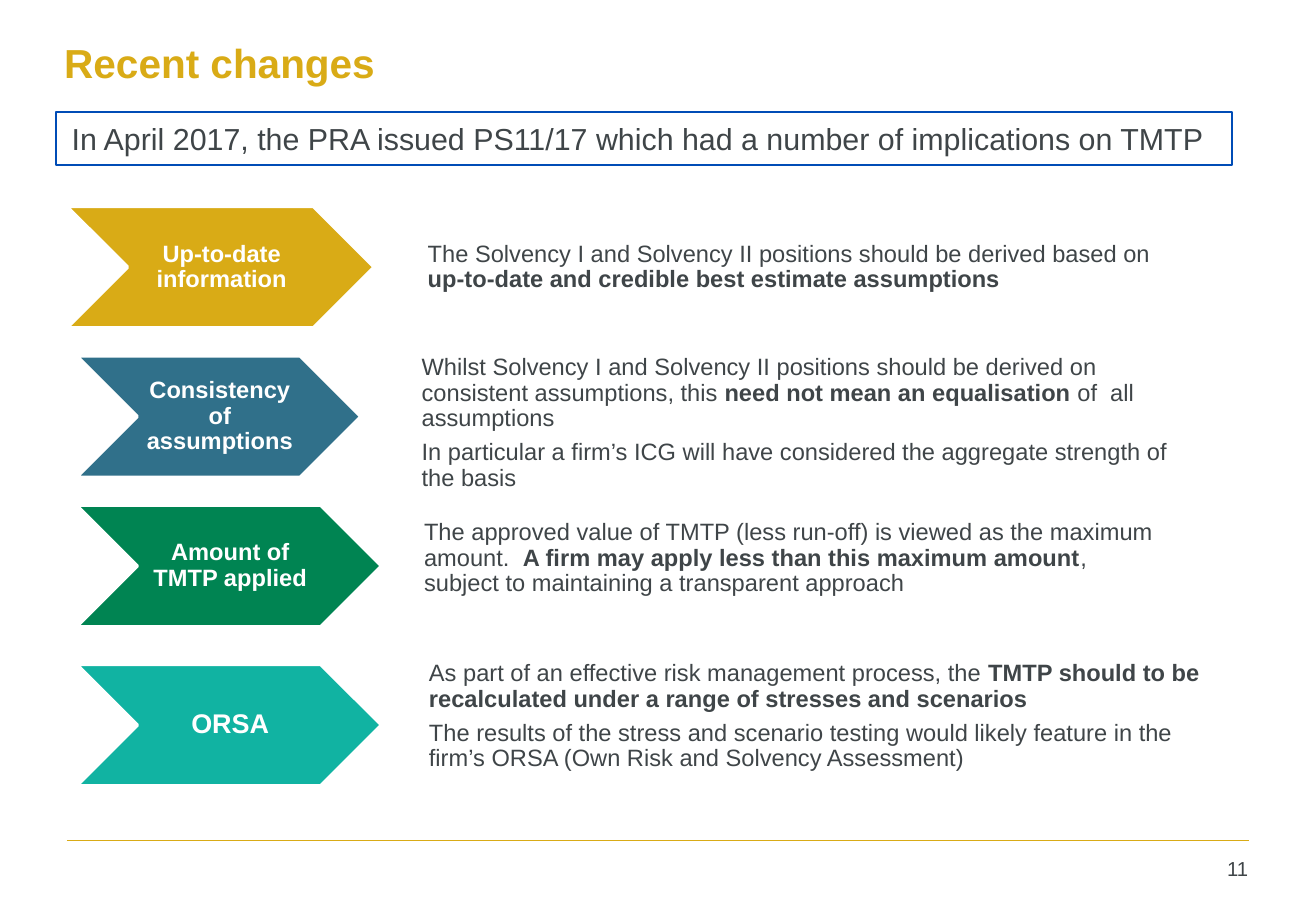
from lxml import etree
from pptx import Presentation
from pptx.dml.color import RGBColor
from pptx.enum import shapes, text
from pptx.oxml.ns import qn
from pptx.util import Inches, Pt

COLOURS = {"gold": "D9AB16", "blue": "30708A", "green": "008452", "teal": "11B3A2",
           "frame": "004CB6", "ink": "3F4548", "white": "FFFFFF"}
FONT = "Arial"

TITLE = "Recent changes"
SUMMARY = "In April 2017, the PRA issued PS11/17 which had a number of implications on TMTP"
PAGE = "11"

# Each detail is a list of paragraphs; each paragraph is a list of (words, bold) runs.
CHANGES = [
    {"label": "Up-to-date information", "size": 14, "colour": "gold",
     "chevron": (0.55, 1.70, 2.53), "detail_at": (3.32, 1.62, 6.59, 1.16),
     "detail": [[("The Solvency I and Solvency II positions should be derived based on ", False),
                 ("up-to-date and credible best estimate assumptions", True)]]},
    {"label": "Consistency of assumptions", "size": 14, "colour": "blue",
     "chevron": (0.63, 2.93, 2.34), "detail_at": (3.27, 2.98, 6.73, 1.01),
     "detail": [[("Whilst Solvency I and Solvency II positions should be derived on "
                  "consistent assumptions, this ", False),
                 ("need not mean an equalisation", True),
                 (" of  all assumptions", False)],
                [("In particular a firm’s ICG will have considered the aggregate "
                  "strength of the basis", False)]]},
    {"label": "Amount of TMTP applied", "size": 14, "colour": "green",
     "chevron": (0.63, 4.16, 2.51), "detail_at": (3.29, 4.02, 6.43, 1.16),
     "detail": [[("The approved value of TMTP (less run-off) is viewed as the maximum "
                  "amount.  ", False),
                 ("A firm may apply less than this maximum amount", True),
                 (", subject to maintaining a transparent approach", False)]]},
    {"label": "ORSA", "size": 16, "colour": "teal",
     "chevron": (0.63, 5.47, 2.51), "detail_at": (3.33, 5.32, 6.79, 1.16),
     "detail": [[("As part of an effective risk management process, the ", False),
                 ("TMTP should to be recalculated under a range of stresses and scenarios",
                  True)],
                [("The results of the stress and scenario testing would likely feature in "
                  "the firm’s ORSA (Own Risk and Solvency Assessment)", False)]]},
]
CHEVRON_HEIGHT = 1.0
CHEVRON_POINT = 0.5  # depth of the point and of the notch

LEFT, CENTRE, RIGHT = text.PP_ALIGN.LEFT, text.PP_ALIGN.CENTER, text.PP_ALIGN.RIGHT
MIDDLE, TOP = text.MSO_ANCHOR.MIDDLE, text.MSO_ANCHOR.TOP


def rgb(name):
    return RGBColor.from_string(COLOURS[name])


def write(frame, paragraphs, size, colour="ink", align=LEFT, anchor=MIDDLE,
          insets=(0.1, 0.05, 0.1, 0.05), line_spacing=1.0, space_after=0):
    """Fill a text frame; insets run left, top, right, bottom in inches."""
    frame.word_wrap = True
    frame.vertical_anchor = anchor
    (frame.margin_left, frame.margin_top,
     frame.margin_right, frame.margin_bottom) = map(Inches, insets)
    for number, runs in enumerate(paragraphs):
        paragraph = frame.add_paragraph() if number else frame.paragraphs[0]
        paragraph.alignment = align
        paragraph.line_spacing = line_spacing
        paragraph.space_before = Pt(0)
        paragraph.space_after = Pt(space_after)
        for words, bold in runs:
            run = paragraph.add_run()
            run.text = words
            run.font.name = FONT
            run.font.size = Pt(size)
            run.font.bold = bold
            run.font.color.rgb = rgb(colour)


def add_text(slide, at, paragraphs, size, **style):
    box = slide.shapes.add_textbox(*map(Inches, at))
    write(box.text_frame, paragraphs, size, **style)


def add_outlined(slide, kind, at, line, width, fill=None):
    shape = slide.shapes.add_shape(kind, *map(Inches, at))
    shape.shadow.inherit = False
    if fill:
        shape.fill.solid()
        shape.fill.fore_color.rgb = rgb(fill)
    else:
        shape.fill.background()
    shape.line.color.rgb = rgb(line)
    shape.line.width = Pt(width)
    return shape


def add_footer(slide):
    rule = slide.shapes.add_connector(
        shapes.MSO_CONNECTOR.STRAIGHT, *map(Inches, (0.55, 6.92, 10.28, 6.92)))
    rule.line.color.rgb = rgb("gold")
    rule.line.width = Pt(1)
    etree.SubElement(rule._element.spPr, qn("a:effectLst"))
    add_text(slide, (9.6, 7, 0.77, 0.37), [[(PAGE, False)]], 12, align=RIGHT, anchor=TOP)


def add_change(slide, change):
    left, top, width = change["chevron"]
    add_outlined(slide, shapes.MSO_SHAPE.CHEVRON, (left, top, width, CHEVRON_HEIGHT),
                 "white", 2, change["colour"])
    add_text(slide, (left + CHEVRON_POINT, top, width - 2 * CHEVRON_POINT, CHEVRON_HEIGHT),
             [[(change["label"], True)]], change["size"], colour="white", align=CENTRE,
             insets=(0.02, 0.01, 0, 0.01), line_spacing=0.9, space_after=5)
    add_text(slide, change["detail_at"], change["detail"], 14,
             insets=(0.2, 0.01, 0.2, 0.01), line_spacing=0.9, space_after=5)


def main():
    deck = Presentation()
    deck.slide_width, deck.slide_height = Inches(10.83), Inches(7.5)
    slide = deck.slides.add_slide(deck.slide_layouts[6])

    add_footer(slide)
    add_text(slide, (0.43, -0.11, 9.82, 1.25), [[(TITLE, True)]], 24, colour="gold")
    summary = add_outlined(slide, shapes.MSO_SHAPE.RECTANGLE, (0.46, 0.92, 9.68, 0.44),
                           "frame", 1.25)
    write(summary.text_frame, [[(SUMMARY, False)]], 18, insets=(0.13, 0.07, 0.13, 0.07))
    for change in CHANGES:
        add_change(slide, change)

    deck.save("out.pptx")


if __name__ == "__main__":
    main()
